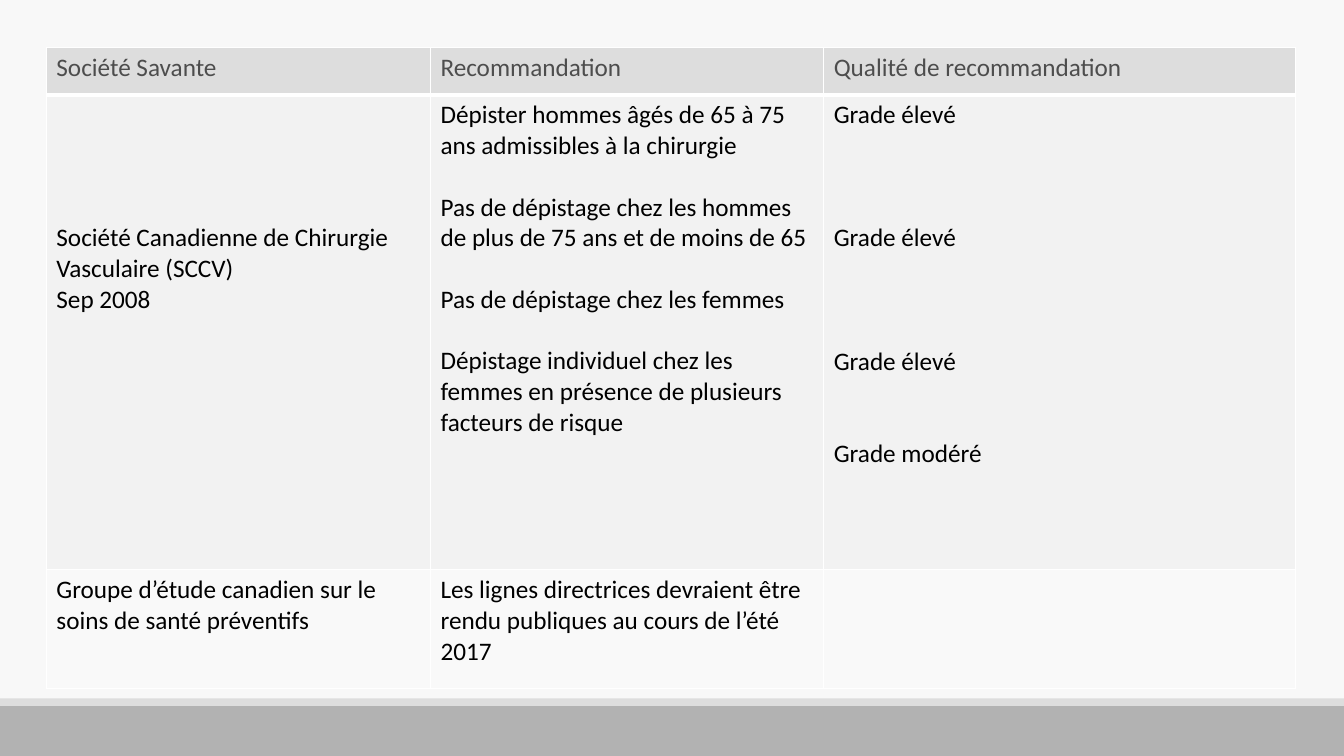
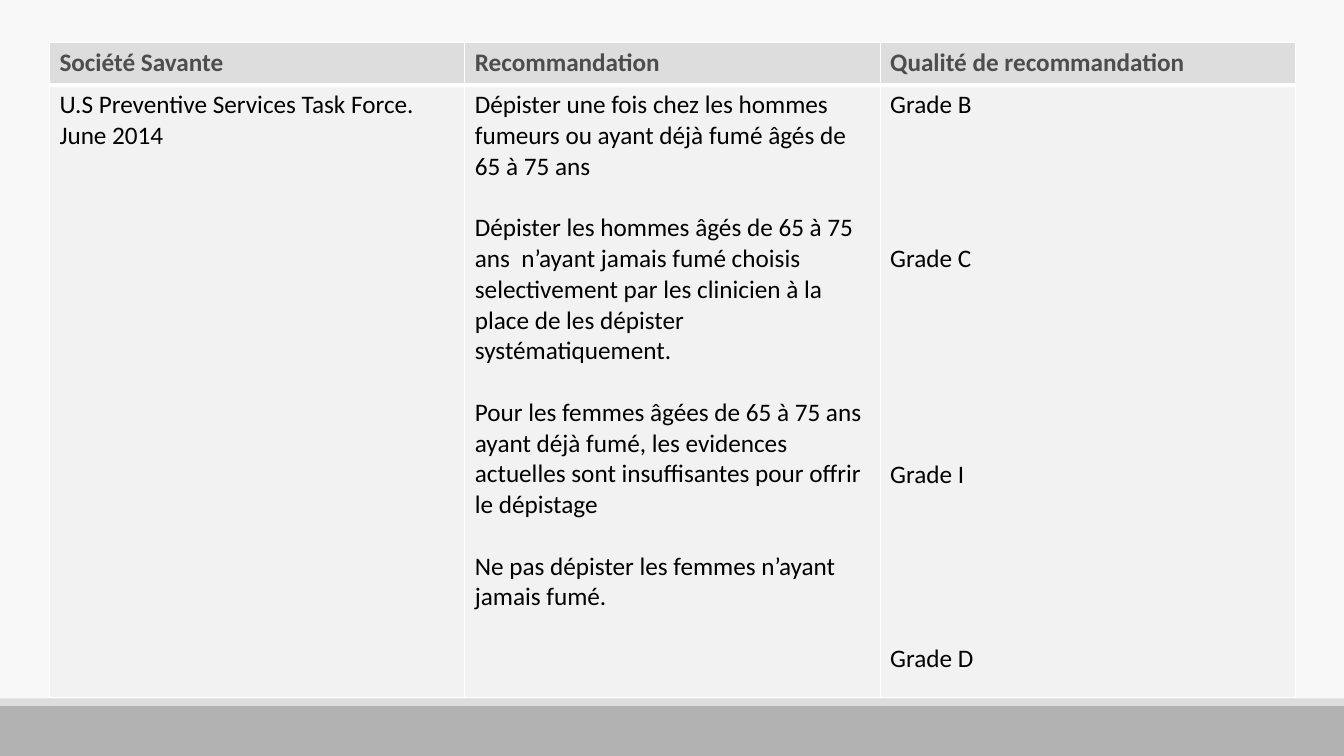
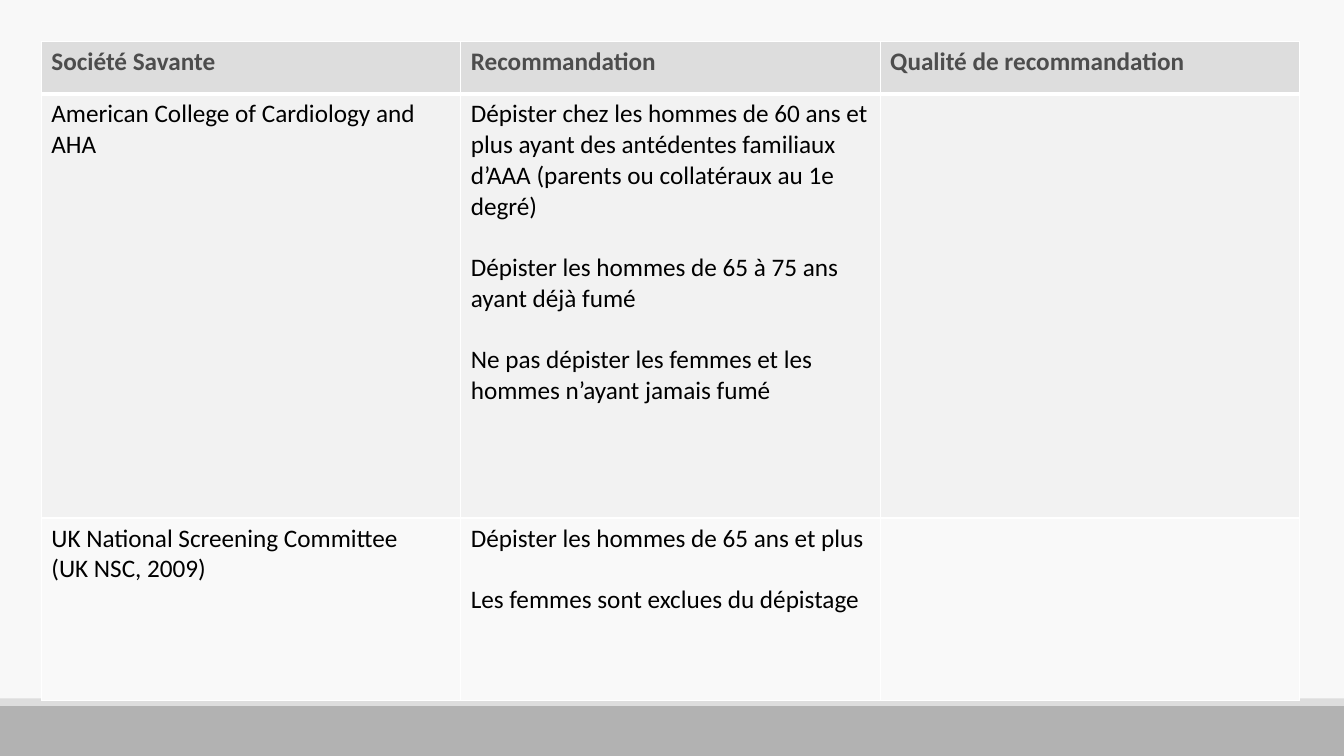
"""Build three slides of screening guideline tables."""
from dataclasses import dataclass

from lxml import etree
from pptx import Presentation
from pptx.dml.color import RGBColor
from pptx.enum.shapes import MSO_SHAPE
from pptx.oxml.ns import qn
from pptx.presentation import Presentation as Deck
from pptx.slide import Slide
from pptx.table import _Cell
from pptx.util import Inches, Pt

RECT = MSO_SHAPE.RECTANGLE
PAPER = RGBColor(0xF8, 0xF8, 0xF8)
BAND = RGBColor(0xB2, 0xB2, 0xB2)
SILVER = RGBColor(0xDD, 0xDD, 0xDD)
WHITE = RGBColor(0xFF, 0xFF, 0xFF)
SLATE = RGBColor(0x4D, 0x4D, 0x4D)
BLACK = RGBColor(0x00, 0x00, 0x00)
FILLS = (SILVER, RGBColor(0xF2, 0xF2, 0xF2), RGBColor(0xF9, 0xF9, 0xF9))
FONT = "Calibri"
SIZE = 18
LINE = 22
WIDTH = 13.33
THIN, THICK = 1, 3


@dataclass(frozen=True)
class Band:
    top: float
    height: float
    fill: RGBColor


@dataclass(frozen=True)
class Para:
    text: str
    gap: int = 0


@dataclass(frozen=True)
class Grid:
    left: float
    top: float
    cols: tuple[float, ...]
    rows: tuple[float, ...]
    bold: bool
    body: tuple[tuple[tuple[Para, ...], ...], ...]


BANDS = (Band(7, 0.5, BAND), Band(6.93, 0.07, SILVER))

HEAD = (
    (Para("Société Savante"),),
    (Para("Recommandation"),),
    (Para("Qualité de recommandation"),),
)

GRIDS = (
    Grid(0.46, 0.47, (3.81, 3.9, 4.68), (0.47, 4.71, 1.18), False, (
        (
            (
                Para("Société Canadienne de Chirurgie Vasculaire (SCCV)", 4),
                Para("Sep 2008"),
            ),
            (
                Para("Dépister hommes âgés de 65 à 75 ans admissibles à la chirurgie"),
                Para("Pas de dépistage chez les hommes de plus de 75 ans et de moins de 65", 1),
                Para("Pas de dépistage chez les femmes", 1),
                Para("Dépistage individuel chez les femmes en présence de plusieurs "
                     "facteurs de risque", 1),
            ),
            (
                Para("Grade élevé"),
                Para("Grade élevé", 3),
                Para("Grade élevé", 3),
                Para("Grade modéré", 2),
            ),
        ),
        (
            (Para("Groupe d’étude canadien sur le soins de santé préventifs"),),
            (Para("Les lignes directrices devraient être rendu publiques au cours "
                  "de l’été 2017"),),
            (),
        ),
    )),
    Grid(0.49, 0.42, (4.12,) * 3, (0.42, 6.08), True, (
        (
            (
                Para("U.S Preventive Services Task Force."),
                Para("June 2014"),
            ),
            (
                Para("Dépister une fois chez les hommes fumeurs ou ayant déjà fumé "
                     "âgés de 65 à 75 ans"),
                Para("Dépister les hommes âgés de 65 à 75 ans  n’ayant jamais fumé choisis "
                     "selectivement par les clinicien à la place de les dépister "
                     "systématiquement.", 1),
                Para("Pour les femmes âgées de 65 à 75 ans ayant déjà fumé, les evidences "
                     "actuelles sont insuffisantes pour offrir le dépistage", 1),
                Para("Ne pas dépister les femmes n’ayant jamais fumé.", 1),
            ),
            (
                Para("Grade B"),
                Para("Grade C", 4),
                Para("Grade I", 6),
                Para("Grade D", 5),
            ),
        ),
    )),
    Grid(0.41, 0.41, (4.16,) * 3, (0.52, 4.21, 1.81), True, (
        (
            (Para("American College of Cardiology and AHA"),),
            (
                Para("Dépister chez les hommes de 60 ans et plus ayant des antédentes "
                     "familiaux d’AAA (parents ou collatéraux au 1e degré)"),
                Para("Dépister les hommes de 65 à 75 ans ayant déjà fumé", 1),
                Para("Ne pas dépister les femmes et les hommes n’ayant jamais fumé", 1),
            ),
            (),
        ),
        (
            (
                Para("UK National Screening Committee"),
                Para("(UK NSC, 2009)"),
            ),
            (
                Para("Dépister les hommes de 65 ans et plus"),
                Para("Les femmes sont exclues du dépistage", 1),
            ),
            (),
        ),
    )),
)


def set_bands(deck: Deck, slide: Slide) -> None:
    master = deck.slide_master
    back = master.background.fill
    back.solid()
    back.fore_color.rgb = PAPER
    for rank, band in enumerate(BANDS):
        shape = slide.shapes.add_shape(
            RECT, 0, Inches(band.top), Inches(WIDTH), Inches(band.height))
        shape.shadow.inherit = False
        shape.fill.solid()
        shape.fill.fore_color.rgb = band.fill
        shape.line.fill.background()
        shape.element.nvSpPr.cNvPr.set("id", str(100 + rank))
        master.shapes.element.append(shape.element)


def set_edges(cell: _Cell, row: int) -> None:
    props = cell._tc.get_or_add_tcPr()
    sides = {
        "lnL": THIN,
        "lnR": THIN,
        "lnT": THICK if row == 1 else THIN,
        "lnB": THICK if row == 0 else THIN,
    }
    for place, (side, width) in enumerate(sides.items()):
        edge = etree.Element(qn(f"a:{side}"), w=str(Pt(width)))
        fill = etree.SubElement(edge, qn("a:solidFill"))
        etree.SubElement(fill, qn("a:srgbClr"), val=str(WHITE))
        props.insert(place, edge)


def set_text(cell: _Cell, paras: tuple[Para, ...], color: RGBColor, bold: bool) -> None:
    frame = cell.text_frame
    frame.text = "\n".join(para.text for para in paras)
    for rank, (line, para) in enumerate(zip(frame.paragraphs, paras)):
        if rank:
            line.space_before = Pt(LINE * para.gap)
        else:
            cell.margin_top = Inches(0.05) + Pt(LINE * para.gap)
        for run in line.runs:
            run.font.name = FONT
            run.font.size = Pt(SIZE)
            run.font.bold = bold
            run.font.color.rgb = color


def draw_grid(slide: Slide, grid: Grid) -> None:
    table = slide.shapes.add_table(
        len(grid.rows), len(grid.cols), Inches(grid.left), Inches(grid.top),
        Inches(sum(grid.cols)), Inches(sum(grid.rows))).table
    for col, width in zip(table.columns, grid.cols):
        col.width = Inches(width)
    for row, height in zip(table.rows, grid.rows):
        row.height = Inches(height)
    for rank, texts in enumerate((HEAD, *grid.body)):
        head = rank == 0
        for cell, paras in zip(table.rows[rank].cells, texts):
            cell.fill.solid()
            cell.fill.fore_color.rgb = FILLS[rank]
            set_edges(cell, rank)
            set_text(cell, paras, SLATE if head else BLACK, head and grid.bold)


def main() -> None:
    deck = Presentation()
    deck.slide_width = Inches(WIDTH)
    deck.slide_height = Inches(7.5)
    blank = deck.slide_layouts[6]
    slides = [deck.slides.add_slide(blank) for _ in GRIDS]
    set_bands(deck, slides[0])
    for slide, grid in zip(slides, GRIDS):
        draw_grid(slide, grid)
    deck.save("out.pptx")


if __name__ == "__main__":
    main()
